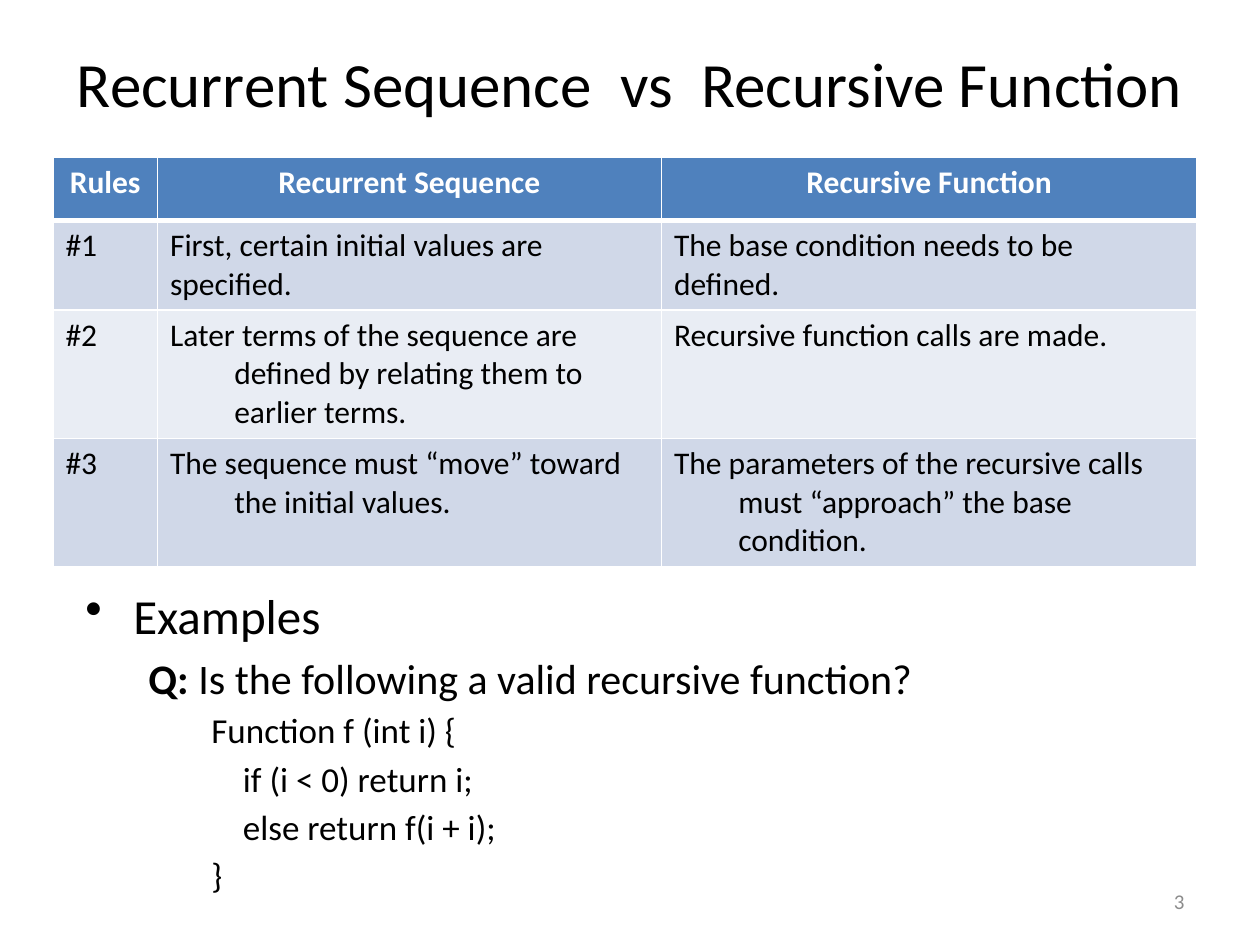
import pptx
import pptx.dml.color
import pptx.enum.text
import pptx.oxml
import pptx.oxml.ns
import pptx.util
from pptx.util import Inches

COLORS = {
    "black": "000000",
    "white": "FFFFFF",
    "number": "8C8C8C",
    "header": "4F81BD",
    "odd_row": "D0D8E8",
    "even_row": "E9EDF4",
}
ALIGN = pptx.enum.text.PP_ALIGN
ANCHOR = pptx.enum.text.MSO_ANCHOR


def style(p, size, color="black", bold=None, align=ALIGN.LEFT, margin=0, indent=0):
    """Set a paragraph's font, alignment and indents (in inches)."""
    p.font.name = "Calibri"
    p.font.size = pptx.util.Pt(size)
    p.font.bold = bold
    p.font.color.rgb = pptx.dml.color.RGBColor.from_string(COLORS[color])
    p.alignment = align
    pPr = p._p.get_or_add_pPr()
    pPr.set("marL", str(Inches(margin)))
    pPr.set("indent", str(Inches(indent)))


def add_text_box(slide, left, top, width, height, anchor):
    tf = slide.shapes.add_textbox(
        Inches(left), Inches(top), Inches(width), Inches(height)).text_frame
    tf.word_wrap = True
    tf.vertical_anchor = anchor
    return tf


prs = pptx.Presentation()
prs.slide_width, prs.slide_height = Inches(10), Inches(7.5)
s = prs.slides.add_slide(prs.slide_layouts[6])

# Slide number and title
p = add_text_box(s, 7.17, 6.95, 2.33, 0.4, ANCHOR.MIDDLE).paragraphs[0]
p.text = "3"
style(p, 12, "number", align=ALIGN.RIGHT)

p = add_text_box(s, 0.5, 0.3, 9, 0.7, ANCHOR.MIDDLE).paragraphs[0]
p.text = "Recurrent Sequence  vs  Recursive Function"
style(p, 36, align=ALIGN.CENTER)

# Example: text, size, bold lead, left margin, first-line indent
example = [
    ("Examples", 28, "", 0.38, -0.38),
    ("Is the following a valid recursive function?", 24, "Q: ", 0.81, -0.31),
    ("Function f (int i) {", 20, "", 1.25, -0.25),
    ("if (i < 0) return i;", 20, "", 1.25, 0),
    ("else return f(i + i);", 20, "", 1.25, 0),
    ("}", 20, "", 1.25, -0.25),
]
tf = add_text_box(s, 0.58, 4.33, 8.67, 2.83, ANCHOR.TOP)
tf.margin_top = Inches(0.32)
for i, (text, size, lead, margin, indent) in enumerate(example):
    p = tf.add_paragraph() if i else tf.paragraphs[0]
    style(p, size, margin=margin, indent=indent)
    p.space_before = pptx.util.Pt(0.18 * size if i else 0)
    if lead:
        r = p.add_run()
        r.text = lead
        r.font.bold = True
    p.add_run().text = text
    bullet = '<a:buNone {}/>' if i else '<a:buChar {} char="•"/>'
    bu = pptx.oxml.parse_xml(bullet.format(pptx.oxml.ns.nsdecls("a")))
    p._p.pPr.insert_element_before(bu, "a:tabLst", "a:defRPr", "a:extLst")

# Comparison table
rows = [
    ("Rules", "Recurrent Sequence", "Recursive Function"),
    ("#1", "First, certain initial values are specified.",
     "The base condition needs to be defined."),
    ("#2", "Later terms of the sequence are defined by relating them to earlier terms.",
     "Recursive function calls are made."),
    ("#3", "The sequence must “move” toward the initial values.",
     "The parameters of the recursive calls must “approach” the base condition."),
]
col_widths = [0.83, 4, 4.25]
row_heights = [0.5, 0.71, 1.02, 1.02]
hanging_cells = {(2, 0), (2, 1), (3, 0), (3, 1), (3, 2)}

table = s.shapes.add_table(
    len(rows), len(col_widths), Inches(0.42), Inches(1.25),
    Inches(sum(col_widths)), Inches(sum(row_heights))).table
for column, width in zip(table.columns, col_widths):
    column.width = Inches(width)
for row, height in zip(table.rows, row_heights):
    row.height = Inches(height)

for i, texts in enumerate(rows):
    fill = "header" if i == 0 else "odd_row" if i % 2 else "even_row"
    for j, text in enumerate(texts):
        cell = table.cell(i, j)
        p = cell.text_frame.paragraphs[0]
        p.text = text
        if i == 0:
            style(p, 18, "white", bold=True, align=ALIGN.CENTER)
        else:
            hang = 0.51 if (i, j) in hanging_cells else 0
            style(p, 18, bold=False, margin=hang, indent=-hang)
        tcPr = cell._tc.get_or_add_tcPr()
        for side in "LRTB":
            thick = (i, side) in ((0, "B"), (1, "T"))
            tcPr.append(pptx.oxml.parse_xml(
                f'<a:ln{side} {pptx.oxml.ns.nsdecls("a")} w="{pptx.util.Pt(3 if thick else 1)}">'
                f'<a:solidFill><a:srgbClr val="{COLORS["white"]}"/></a:solidFill></a:ln{side}>'))
        cell.fill.solid()
        cell.fill.fore_color.rgb = pptx.dml.color.RGBColor.from_string(COLORS[fill])

prs.save("out.pptx")
